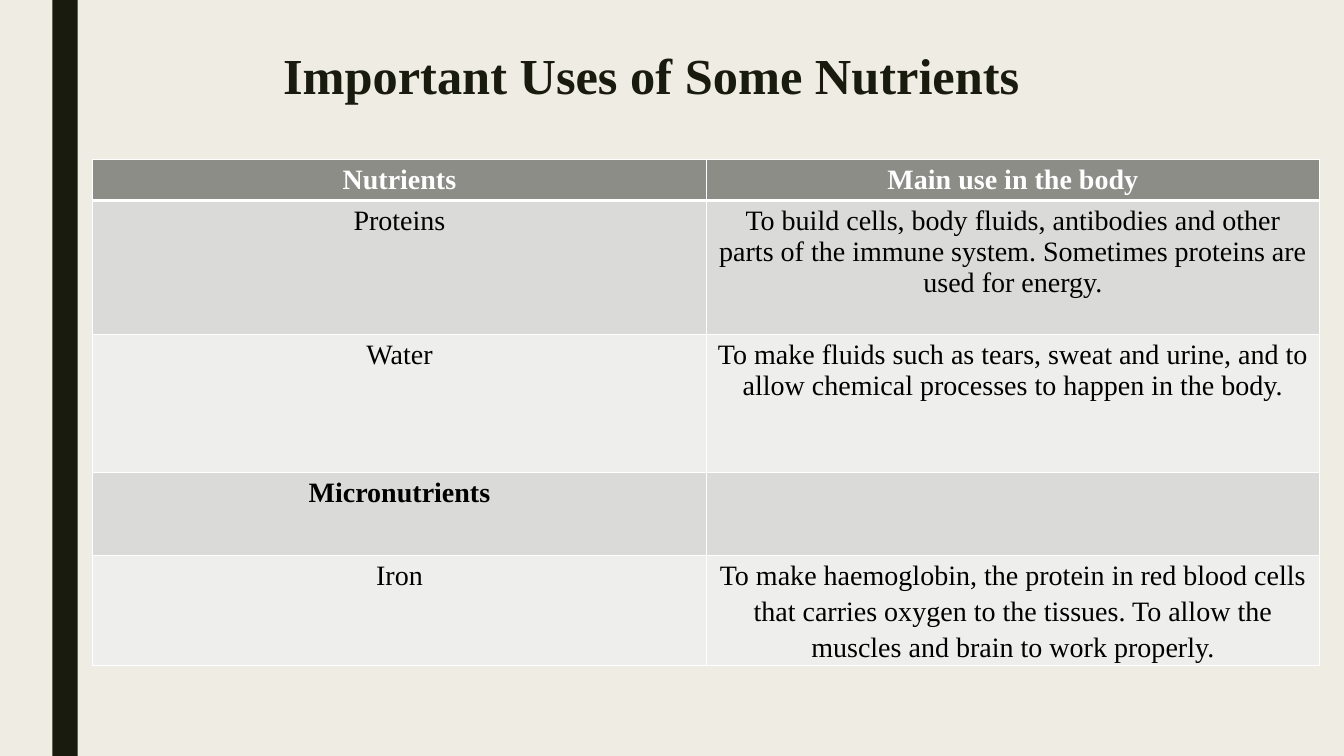
"""Build a slide with a table of nutrients and their main uses in the body."""
import pptx
import pptx.dml.color
import pptx.enum.shapes
import pptx.enum.text
import pptx.oxml
import pptx.oxml.ns
import pptx.util

RGBColor = pptx.dml.color.RGBColor
Inches = pptx.util.Inches
Pt = pptx.util.Pt
ALIGN = pptx.enum.text.PP_ALIGN
ANCHOR = pptx.enum.text.MSO_ANCHOR

BACKGROUND = RGBColor(0xEF, 0xED, 0xE3)
DARK = RGBColor(0x19, 0x1B, 0x0E)
HEADER = RGBColor(0x8C, 0x8D, 0x86)
BAND_DARK = RGBColor(0xDA, 0xDB, 0xD9)
BAND_LIGHT = RGBColor(0xEE, 0xEE, 0xED)
WHITE = RGBColor(0xFF, 0xFF, 0xFF)
BLACK = RGBColor(0x00, 0x00, 0x00)
FONT = "Times New Roman"

ROWS = [
    ("Nutrients", "Main use in the body"),
    ("Proteins", "To build cells, body fluids, antibodies and other parts of the "
                 "immune system. Sometimes proteins are used for energy."),
    ("Water", "To make fluids such as tears, sweat and urine, and to allow "
              "chemical processes to happen in the body."),
    ("Micronutrients", ""),
    ("Iron", "To make haemoglobin, the protein in red blood cells that carries "
             "oxygen to the tissues. To allow the muscles and brain to work properly."),
]
ROW_HEIGHTS = [0.41, 1.33, 1.37, 0.82, 1.09]


def write(tf, text, size=20, color=BLACK, bold=False, spacing=None, after=None):
    p = tf.paragraphs[0]
    p.alignment = ALIGN.CENTER
    p.line_spacing = spacing
    if after is not None:
        p.space_after = Pt(after)
    p.font.size = Pt(size)
    if text:
        r = p.add_run()
        r.text = text
        r.font.name = FONT
        r.font.size = Pt(size)
        r.font.bold = bold
        r.font.color.rgb = color


class SlideBuilder:
    def __init__(self, prs):
        self.s = prs.slides.add_slide(prs.slide_layouts[5])
        self.s.background.fill.solid()
        self.s.background.fill.fore_color.rgb = BACKGROUND

    def bar(self, left, top, width, height):
        sp = self.s.shapes.add_shape(
            pptx.enum.shapes.MSO_SHAPE.RECTANGLE,
            Inches(left), Inches(top), Inches(width), Inches(height))
        sp.shadow.inherit = False
        sp.fill.solid()
        sp.fill.fore_color.rgb = DARK
        sp.line.fill.background()

    def title(self, text, left, top, width, height):
        sp = self.s.shapes.title
        sp.left, sp.top = Inches(left), Inches(top)
        sp.width, sp.height = Inches(width), Inches(height)
        tf = sp.text_frame
        tf.word_wrap = True
        tf.auto_size = pptx.enum.text.MSO_AUTO_SIZE.NONE
        tf.vertical_anchor = ANCHOR.TOP
        tf.margin_top = Inches(0.26)
        write(tf, text, size=36, color=DARK, bold=True, spacing=0.89)

    def borders(self, cell, **widths):
        tc_pr = cell._tc.get_or_add_tcPr()
        for i, side in enumerate("LRTB"):
            width = Pt(widths.get(side, 1))
            tc_pr.insert(i, pptx.oxml.parse_xml(
                f'<a:ln{side} {pptx.oxml.ns.nsdecls("a")} w="{width}">'
                f'<a:solidFill><a:srgbClr val="{WHITE}"/></a:solidFill></a:ln{side}>'))

    def table(self, rows, heights, left, top, width):
        columns = len(rows[0])
        table = self.s.shapes.add_table(
            len(rows), columns, Inches(left), Inches(top),
            Inches(width), Inches(sum(heights))).table
        for column in table.columns:
            column.width = Inches(width / columns)
        last = len(rows) - 1
        for i, (texts, height) in enumerate(zip(rows, heights)):
            table.rows[i].height = Inches(height)
            for j, text in enumerate(texts):
                cell = table.cell(i, j)
                cell.fill.solid()
                band = BAND_DARK if i % 2 else BAND_LIGHT
                cell.fill.fore_color.rgb = HEADER if i == 0 else band
                self.borders(cell, T=3 if i == 1 else 1, B=3 if i == 0 else 1)
                style = {}
                if i == last:
                    cell.margin_left = cell.margin_right = Inches(0.01)
                    cell.margin_top = cell.margin_bottom = Inches(0.01)
                    style = {"spacing": 1.15, "after": 10}
                write(cell.text_frame, text, color=BLACK if i else WHITE,
                      bold=i == 0 or text == "Micronutrients", **style)


def main():
    prs = pptx.Presentation()
    prs.slide_width, prs.slide_height = Inches(13.33), Inches(7.5)
    slide = SlideBuilder(prs)
    slide.bar(0.52, 0, 0.25, 7.5)
    slide.title("Important Uses of Some Nutrients", 0.92, 0.25, 11.08, 1.62)
    slide.table(ROWS, ROW_HEIGHTS, 0.92, 1.58, 12.17)
    prs.save("out.pptx")


if __name__ == "__main__":
    main()
